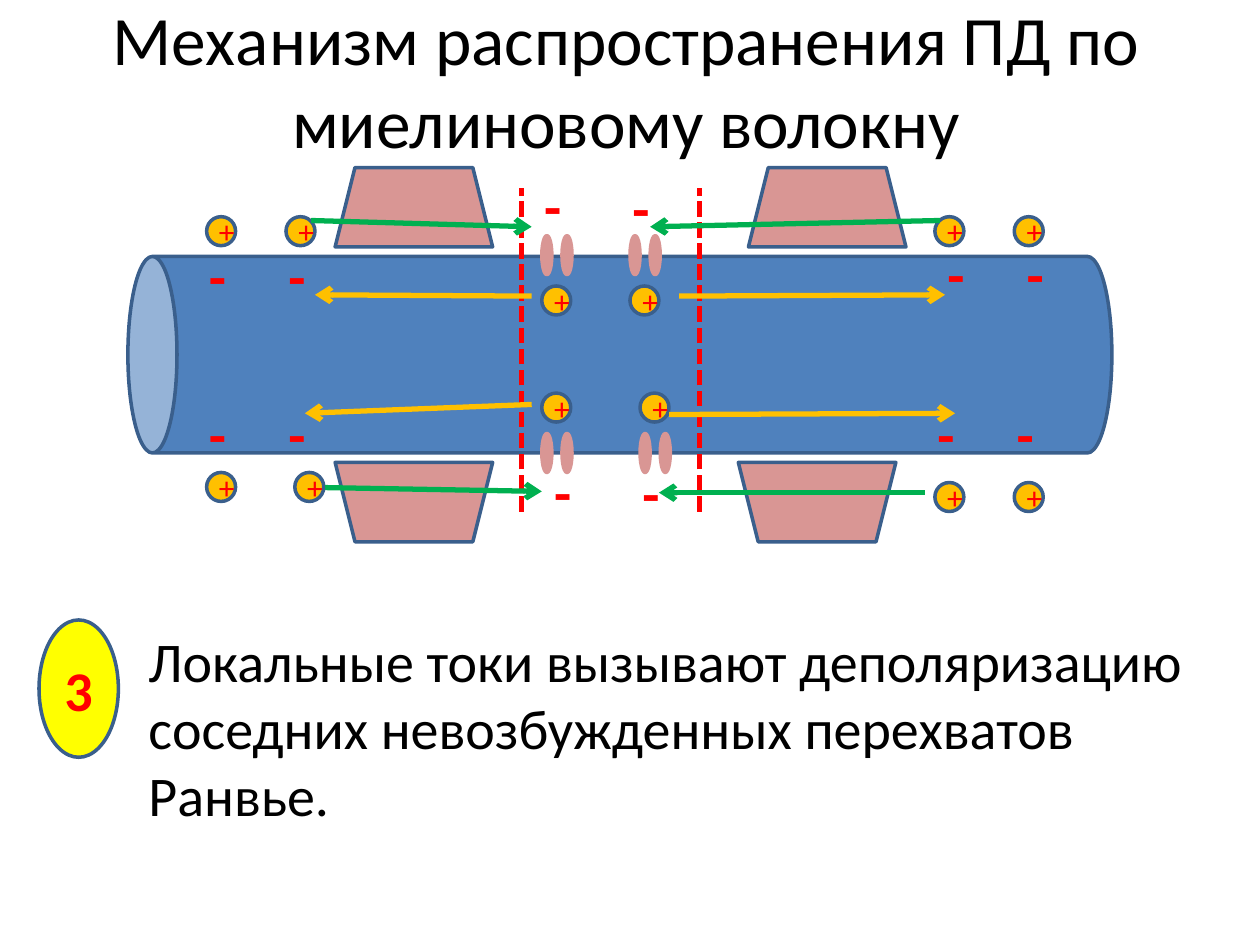
from typing import NamedTuple, Optional

from pptx import Presentation
from pptx.dml.color import RGBColor
from pptx.enum.dml import MSO_LINE
from pptx.enum.shapes import MSO_CONNECTOR, MSO_SHAPE as Preset
from pptx.enum.text import MSO_ANCHOR as Anchor, PP_ALIGN as Align
from pptx.oxml.ns import qn
from pptx.util import Inches, Pt
from lxml.etree import SubElement

COLORS = {
    "text": "000000",
    "sign": "FF0000",
    "axon": "4F81BD",
    "outline": "3A5F8C",
    "myelin": "D99694",
    "ion": "FFC000",
    "outer current": "00B050",
    "inner current": "FFC000",
    "badge": "FFFF00",
}


class Box(NamedTuple):
    left: float
    top: float
    width: float
    height: float

    def lengths(self):
        return [Inches(value) for value in self]


class Stroke(NamedTuple):
    start: tuple[float, float]
    end: tuple[float, float]
    color: str
    arrow: bool = True


class SignRow(NamedTuple):
    top: float
    lefts: tuple[float, ...]


ION_SIZE = 0.23
CHANNEL_GAP = 0.16

ION_ROWS = [
    SignRow(1.72, (1.64, 2.27, 7.42, 8.05)),
    SignRow(2.27, (4.3, 5)),
    SignRow(3.12, (4.3, 5.08)),
    SignRow(3.75, (1.64, 2.34)),
    SignRow(3.83, (7.42, 8.05)),
]
MINUS_ROWS = [
    SignRow(1.31, (4.22,)),
    SignRow(1.33, (4.92,)),
    SignRow(1.87, (1.56, 2.19)),
    SignRow(1.85, (7.42, 8.05)),
    SignRow(3.12, (1.56, 2.19, 7.34, 7.97)),
    SignRow(3.58, (4.3,)),
    SignRow(3.59, (5,)),
]
CHANNEL_ROWS = [SignRow(1.87, (4.3, 5)), SignRow(3.44, (4.3, 5.08))]
MYELIN_ROWS = [(SignRow(1.33, (2.66, 5.94)), 0), (SignRow(3.67, (2.66, 5.86)), 180)]

NODE_BORDERS = [Stroke((x, 4.06), (x, 1.49), "sign", arrow=False) for x in (4.14, 5.55)]
CURRENTS = [
    Stroke((7.46, 1.75), (5.16, 1.8), "outer current"),
    Stroke((7.34, 3.91), (5.23, 3.91), "outer current"),
    Stroke((2.58, 3.87), (4.3, 3.9), "outer current"),
    Stroke((2.47, 1.75), (4.22, 1.8), "outer current"),
    Stroke((5.31, 3.29), (7.58, 3.28), "inner current"),
    Stroke((5.39, 2.35), (7.5, 2.34), "inner current"),
    Stroke((4.22, 2.35), (2.5, 2.34), "inner current"),
    Stroke((4.22, 3.21), (2.42, 3.28), "inner current"),
]


def rgb(name: str) -> RGBColor:
    return RGBColor.from_string(COLORS[name])


def write(holder, text: str, *, size: float, color: str = "text", bold: bool = False,
          align=Align.LEFT, anchor=Anchor.TOP, before: float = 0):
    frame = holder.text_frame
    frame.word_wrap = True
    frame.vertical_anchor = anchor
    paragraph = frame.paragraphs[0]
    paragraph.alignment = align
    paragraph.space_before = Pt(before)
    run = paragraph.add_run()
    run.text = text
    run.font.name = "Calibri"
    run.font.size = Pt(size)
    run.font.bold = bold
    run.font.color.rgb = rgb(color)
    return paragraph


def draw_shape(slide, preset, box: Box, fill: str, outline: str = "outline", rotation: float = 0):
    shape = slide.shapes.add_shape(preset, *box.lengths())
    shape.shadow.inherit = False
    shape.rotation = rotation
    shape.fill.solid()
    shape.fill.fore_color.rgb = rgb(fill)
    shape.line.color.rgb = rgb(outline)
    shape.line.width = Pt(2)
    return shape


def draw_stroke(slide, stroke: Stroke, dash: Optional[MSO_LINE] = None) -> None:
    ends = [Inches(value) for value in stroke.start + stroke.end]
    connector = slide.shapes.add_connector(MSO_CONNECTOR.STRAIGHT, *ends)
    connector.line.color.rgb = rgb(stroke.color)
    connector.line.width = Pt(3)
    if dash is not None:
        connector.line.dash_style = dash
    properties = connector._element.spPr
    if stroke.arrow:
        SubElement(properties.find(qn("a:ln")), qn("a:tailEnd"), type="arrow")
    SubElement(properties, qn("a:effectLst"))


def draw_ion(slide, left: float, top: float) -> None:
    ion = draw_shape(slide, Preset.OVAL, Box(left, top, ION_SIZE, ION_SIZE), "ion")
    write(ion, "+", size=18, color="sign", align=Align.CENTER, anchor=Anchor.MIDDLE)


def draw_minus(slide, left: float, top: float) -> None:
    minus = slide.shapes.add_textbox(*Box(left, top, 0.39, 0.64).lengths())
    write(minus, "-", size=32, color="sign", bold=True)


def draw_channel(slide, left: float, top: float) -> None:
    for side in range(2):
        gate = Box(left + side * CHANNEL_GAP, top, 0.08, 0.31)
        draw_shape(slide, Preset.OVAL, gate, "myelin", "myelin")


def draw_rows(slide, rows: list[SignRow], draw) -> None:
    for row in rows:
        for left in row.lefts:
            draw(slide, left, row.top)


def main() -> None:
    deck = Presentation()
    deck.slide_width, deck.slide_height = Inches(10), Inches(7.5)
    slide = deck.slides.add_slide(deck.slide_layouts[6])

    # Title
    title = slide.shapes.add_textbox(*Box(0.47, 0.16, 9, 0.94).lengths())
    write(title, "Механизм распространения ПД по миелиновому волокну", size=39.6,
          align=Align.CENTER, anchor=Anchor.MIDDLE)

    # Numbered explanation, indented past the badge
    explanation = slide.shapes.add_textbox(*Box(0.7, 4.92, 9.06, 2.32).lengths())
    sentence = write(explanation, "Локальные токи вызывают деполяризацию соседних "
                     "невозбужденных перехватов Ранвье.", size=32, before=6.4)
    sentence._p.get_or_add_pPr().set("marL", str(Inches(0.38)))
    badge = draw_shape(slide, Preset.OVAL, Box(0.31, 4.92, 0.63, 1.09), "badge")
    write(badge, "3", size=32, color="sign", bold=True,
          align=Align.CENTER, anchor=Anchor.MIDDLE)

    # Axon and the borders of the node of Ranvier
    draw_shape(slide, Preset.CAN, Box(4.14, -1.09, 1.56, 7.81), "axon", rotation=270)
    for border in NODE_BORDERS:
        draw_stroke(slide, border, MSO_LINE.SQUARE_DOT)

    # Ion channels and charges
    draw_rows(slide, CHANNEL_ROWS, draw_channel)
    draw_rows(slide, ION_ROWS, draw_ion)
    draw_rows(slide, MINUS_ROWS, draw_minus)

    # Myelin sheath
    for row, rotation in MYELIN_ROWS:
        for left in row.lefts:
            draw_shape(slide, Preset.TRAPEZOID, Box(left, row.top, 1.25, 0.63),
                       "myelin", rotation=rotation)

    # Local currents
    for current in CURRENTS:
        draw_stroke(slide, current)

    deck.save("out.pptx")


if __name__ == "__main__":
    main()
